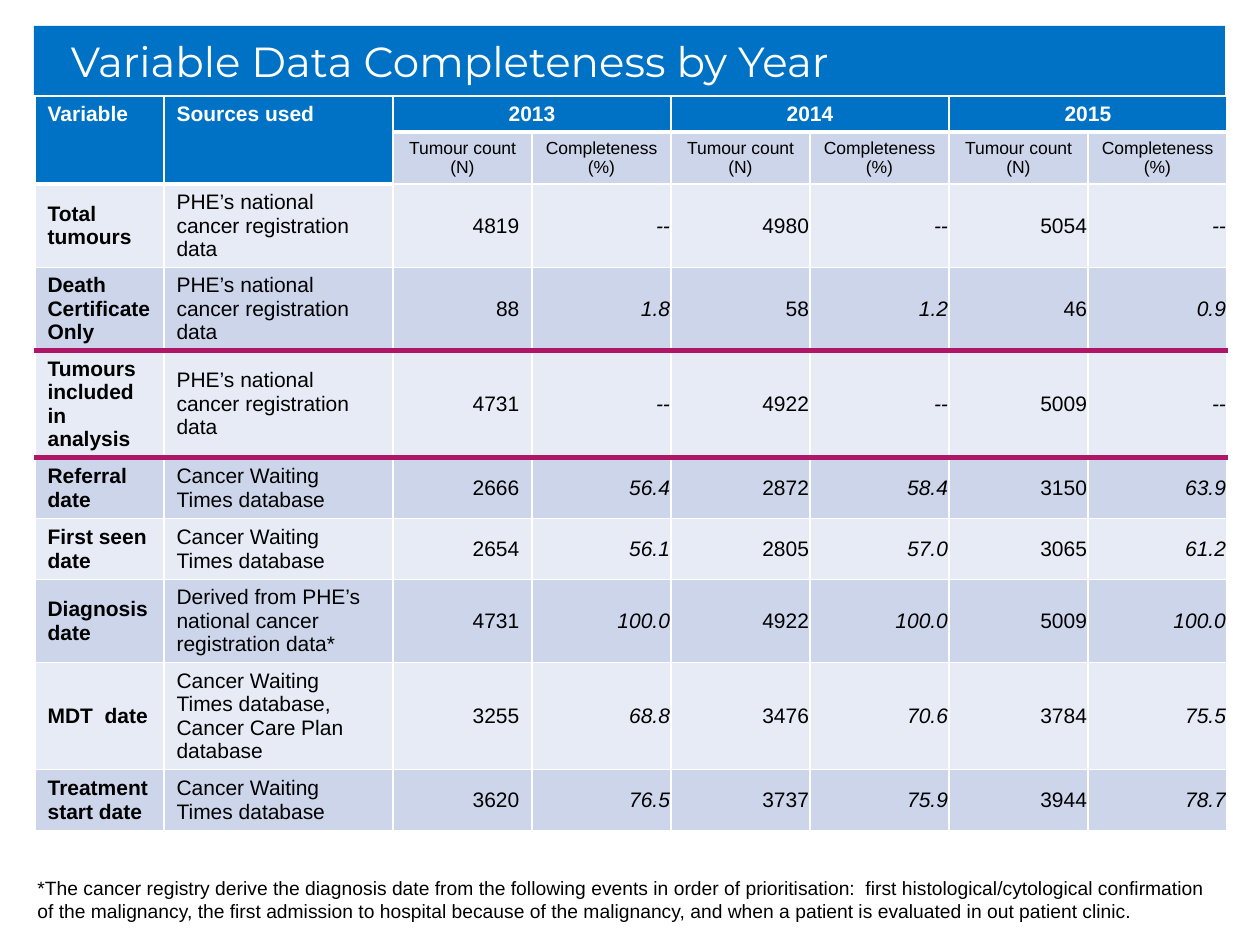
from lxml.etree import SubElement
from pptx import Presentation
from pptx.dml.color import RGBColor
from pptx.enum.shapes import MSO_SHAPE
from pptx.enum.text import MSO_ANCHOR, PP_ALIGN
from pptx.oxml.ns import qn
from pptx.util import Pt

PX = 914400 // 126  # EMU per pixel

BLUE = RGBColor(0x00, 0x72, 0xC6)
DARK_BAND = RGBColor(0xCC, 0xD5, 0xEA)
LIGHT_BAND = RGBColor(0xE7, 0xEB, 0xF5)
MAGENTA = RGBColor(0xAF, 0x16, 0x65)
WHITE = RGBColor(0xFF, 0xFF, 0xFF)
BLACK = RGBColor(0x00, 0x00, 0x00)

YEARS = ["2013", "2014", "2015"]
HEADER_ROWS = 2
LABEL_COLUMNS = 2
COLUMN_WIDTHS = [129, 229] + [139] * 6
ROW_HEIGHTS = [35, 52, 83, 83, 107, 61, 61, 83, 107, 61]

REGISTRY = "PHE’s national cancer registration data"
WAITING_TIMES = "Cancer Waiting Times database"
VARIABLES = [
    ["Total tumours", REGISTRY, "4819", "--", "4980", "--", "5054", "--"],
    ["Death Certificate Only", REGISTRY, "88", "1.8", "58", "1.2", "46", "0.9"],
    ["Tumours included in analysis", REGISTRY,
     "4731", "--", "4922", "--", "5009", "--"],
    ["Referral date", WAITING_TIMES,
     "2666", "56.4", "2872", "58.4", "3150", "63.9"],
    ["First seen date", WAITING_TIMES,
     "2654", "56.1", "2805", "57.0", "3065", "61.2"],
    ["Diagnosis date", "Derived from PHE’s national cancer registration data*",
     "4731", "100.0", "4922", "100.0", "5009", "100.0"],
    ["MDT  date", "Cancer Waiting Times database, Cancer Care Plan database",
     "3255", "68.8", "3476", "70.6", "3784", "75.5"],
    ["Treatment start date", WAITING_TIMES,
     "3620", "76.5", "3737", "75.9", "3944", "78.7"],
]
FOOTNOTE = (
    "*The cancer registry derive the diagnosis date from the following events "
    "in order of prioritisation:  first histological/cytological confirmation "
    "of the malignancy, the first admission to hospital because of the "
    "malignancy, and when a patient is evaluated in out patient clinic."
)


def emu(*lengths):
    return [length * PX for length in lengths]


def format_text(frame, size, color, font="Arial", bold=False, italic=False,
                align=PP_ALIGN.LEFT):
    for paragraph in frame.paragraphs:
        paragraph.alignment = align
        for run in paragraph.runs:
            run.font.name = font
            run.font.size = Pt(size)
            run.font.bold = bold
            run.font.italic = italic
            run.font.color.rgb = color


def add_title(slide, left, top, width, height):
    banner = slide.shapes.add_shape(
        MSO_SHAPE.RECTANGLE, *emu(left, top, width, height))
    banner.shadow.inherit = False
    banner.fill.solid()
    banner.fill.fore_color.rgb = BLUE
    banner.line.fill.background()
    frame = banner.text_frame
    frame.text = "Variable Data Completeness by Year"
    frame.margin_left = 37 * PX
    frame.vertical_anchor = MSO_ANCHOR.MIDDLE
    format_text(frame, 24, WHITE, "Montserrat")


def rule_above(row, column):
    """Colour and weight of the horizontal rule on top of a cell."""
    if row in (4, 5):  # around the tumours included in the analysis
        return MAGENTA, 3
    if row == (2 if column < LABEL_COLUMNS else 1):
        return WHITE, 3
    return WHITE, 1


def set_borders(cell, row, column):
    sides = {
        "a:lnL": (WHITE, 1),
        "a:lnR": (WHITE, 1),
        "a:lnT": rule_above(row, column),
        "a:lnB": rule_above(row + cell.span_height, column),
    }
    properties = cell._tc.get_or_add_tcPr()
    for position, (side, (color, weight)) in enumerate(sides.items()):
        line = SubElement(properties, qn(side), w=str(Pt(weight)))
        fill = SubElement(line, qn("a:solidFill"))
        SubElement(fill, qn("a:srgbClr"), val=str(color))
        properties.insert(position, line)


def style_cell(cell, row, column):
    frame = cell.text_frame
    is_label = column < LABEL_COLUMNS
    cell.fill.solid()
    if row == 0:
        cell.fill.fore_color.rgb = BLUE
        format_text(frame, 12, WHITE, bold=True,
                    align=PP_ALIGN.LEFT if is_label else PP_ALIGN.CENTER)
    elif row == 1:
        cell.fill.fore_color.rgb = DARK_BAND
        format_text(frame, 10, BLACK, align=PP_ALIGN.CENTER)
    else:
        cell.fill.fore_color.rgb = DARK_BAND if row % 2 else LIGHT_BAND
        cell.vertical_anchor = MSO_ANCHOR.MIDDLE
        format_text(frame, 12, BLACK, bold=column == 0,
                    italic=not is_label and column % 2 == 1,
                    align=PP_ALIGN.LEFT if is_label else PP_ALIGN.RIGHT)
        if column > LABEL_COLUMNS:
            cell.margin_left = cell.margin_right = cell.margin_top = PX
            cell.margin_bottom = 0
    set_borders(cell, row, column)


def add_completeness_table(slide, left, top):
    table = slide.shapes.add_table(
        len(ROW_HEIGHTS), len(COLUMN_WIDTHS),
        *emu(left, top, sum(COLUMN_WIDTHS), sum(ROW_HEIGHTS))).table
    table.first_row = table.horz_banding = False
    for column, width in zip(table.columns, COLUMN_WIDTHS):
        column.width = width * PX
    for row, height in zip(table.rows, ROW_HEIGHTS):
        row.height = height * PX

    # Merged headings
    for column, heading in enumerate(["Variable", "Sources used"]):
        table.cell(0, column).merge(table.cell(1, column))
        table.cell(0, column).text = heading
    for index, year in enumerate(YEARS):
        column = LABEL_COLUMNS + 2 * index
        table.cell(0, column).merge(table.cell(0, column + 1))
        table.cell(0, column).text = year
        table.cell(1, column).text = "Tumour count\n(N)"
        table.cell(1, column + 1).text = "Completeness (%)"

    # Variables
    for row, values in enumerate(VARIABLES, HEADER_ROWS):
        for column, value in enumerate(values):
            table.cell(row, column).text = value

    for row in range(len(ROW_HEIGHTS)):
        for column in range(len(COLUMN_WIDTHS)):
            cell = table.cell(row, column)
            if not cell.is_spanned:
                style_cell(cell, row, column)


def add_footnote(slide, left, top, width, height):
    frame = slide.shapes.add_textbox(
        *emu(left, top, width, height)).text_frame
    frame.word_wrap = True
    frame.text = FOOTNOTE
    format_text(frame, 11, BLACK)


def main():
    presentation = Presentation()
    presentation.slide_width, presentation.slide_height = emu(1260, 945)
    slide = presentation.slides.add_slide(presentation.slide_layouts[6])
    add_title(slide, 34, 26, 1191, 69)
    add_completeness_table(slide, 35, 96)
    add_footnote(slide, 25, 870, 1201, 59)
    presentation.save("out.pptx")


if __name__ == "__main__":
    main()
